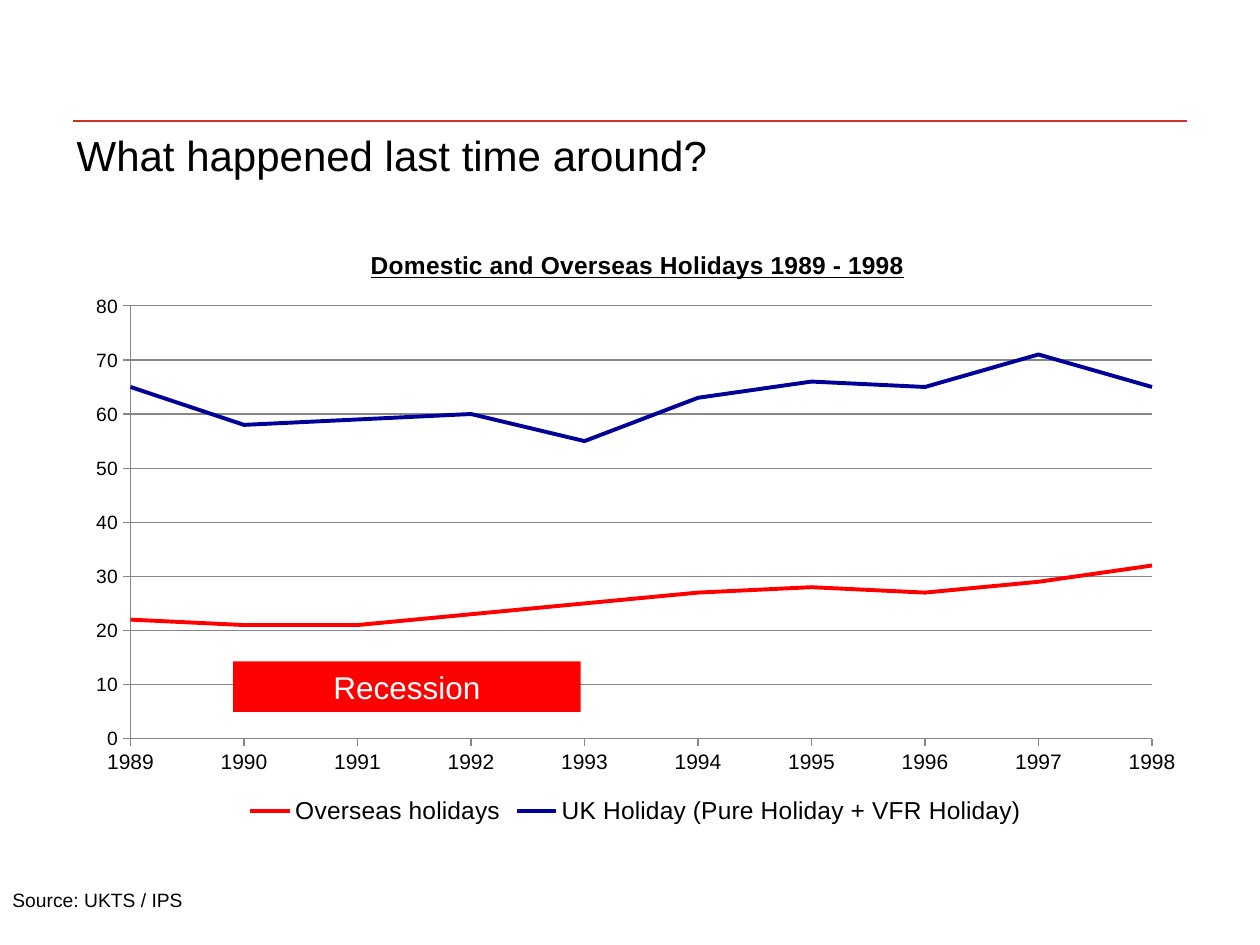
import pptx
import pptx.util
import pptx.chart.data
import pptx.dml.color
import pptx.enum.chart
import pptx.enum.shapes
import pptx.enum.text
import pptx.oxml
import pptx.oxml.ns

Pt = pptx.util.Pt
RGB = pptx.dml.color.RGBColor.from_string
ALIGN = pptx.enum.text.PP_ALIGN
ANCHOR = pptx.enum.text.MSO_ANCHOR

HEADING = "What happened last time around?"
SOURCE = "Source: UKTS / IPS"
CALLOUT = "Recession"
CHART_TITLE = "Domestic and Overseas Holidays 1989 - 1998"
YEARS = [str(year) for year in range(1989, 1999)]
HOLIDAYS = [
    ("Overseas holidays", "red", [22, 21, 21, 23, 25, 27, 28, 27, 29, 32]),
    ("UK Holiday (Pure Holiday + VFR Holiday)", "navy",
     [65, 58, 59, 60, 55, 63, 66, 65, 71, 65]),
]
THEME = {
    "font": "Arial",
    "colors": {"text": "000000", "white": "FFFFFF", "red": "FF0000",
               "navy": "000099", "rule": "CD3425", "grid": "868686"},
    "sizes": {"heading": 24, "callout": 18, "chart": 18, "chart_title": 14,
              "legend": 14, "years": 12, "values": 11, "source": 11},
}
# left, top, width, height in points
PLACES = {
    "chart": (42.5, 126, 641.5, 348.5),
    "heading": (36.7, 68.4, 680.4, 39.6),
    "source": (0, 504, 679.7, 33.8),
    "callout": (133.2, 378, 198.7, 28.8),
}
RULE = (41.8, 69.1, 678.2, 69.1)
# shares of the chart's width and height
TITLE_LAYOUT = {"x": 0.26, "y": 0.04}
PLOT_LAYOUT = {"x": 0.05, "y": 0.14, "w": 0.91, "h": 0.71}


def box(part):
    return [Pt(length) for length in PLACES[part]]


def style_font(font, part, color="text", bold=False):
    font.name = THEME["font"]
    font.size = Pt(THEME["sizes"][part])
    font.bold = bold
    font.color.rgb = RGB(THEME["colors"][color])


def style_line(line, color, width):
    line.color.rgb = RGB(THEME["colors"][color])
    line.width = Pt(width)


def write(shape, text, part, color="text", align=ALIGN.LEFT, anchor=ANCHOR.TOP):
    frame = shape.text_frame
    frame.word_wrap = True
    frame.vertical_anchor = anchor
    paragraph = frame.paragraphs[0]
    paragraph.text = text
    paragraph.alignment = align
    style_font(paragraph.font, part, color)


def layout_xml(shares, inner=False):
    """Manual chart layout, given as shares of the chart area."""
    target = '<c:layoutTarget val="inner"/>' if inner else ""
    modes = "".join(f'<c:{key}Mode val="edge"/>' for key in "xy")
    values = "".join(f'<c:{key} val="{share}"/>' for key, share in shares.items())
    return pptx.oxml.parse_xml(
        f'<c:layout {pptx.oxml.ns.nsdecls("c")}><c:manualLayout>'
        f"{target}{modes}{values}</c:manualLayout></c:layout>")


def place_in_chart(element, layout, after=None):
    for old in element.findall(pptx.oxml.ns.qn("c:layout")):
        element.remove(old)
    if after is None:
        element.insert(0, layout)
    else:
        element.find(pptx.oxml.ns.qn(after)).addnext(layout)


def start_lines_on_axis(value_axis):
    """Drop the half-category gap before the first and after the last year."""
    for old in value_axis.findall(pptx.oxml.ns.qn("c:crossBetween")):
        value_axis.remove(old)
    value_axis.find(pptx.oxml.ns.qn("c:crosses")).addnext(pptx.oxml.parse_xml(
        f'<c:crossBetween {pptx.oxml.ns.nsdecls("c")} val="midCat"/>'))


def add_rule(slide):
    rule = slide.shapes.add_connector(
        pptx.enum.shapes.MSO_CONNECTOR.STRAIGHT, *[Pt(end) for end in RULE])
    style_line(rule.line, "rule", 0.75)
    rule._element.spPr.append(pptx.oxml.parse_xml(
        f'<a:effectLst {pptx.oxml.ns.nsdecls("a")}/>'))


def add_holiday_chart(slide):
    holiday_data = pptx.chart.data.CategoryChartData()
    holiday_data.categories = YEARS
    for name, _, values in HOLIDAYS:
        holiday_data.add_series(name, values)
    chart = slide.shapes.add_chart(
        pptx.enum.chart.XL_CHART_TYPE.LINE, *box("chart"), holiday_data).chart
    style_font(chart.font, "chart")

    chart.has_title = True
    title = chart.chart_title.text_frame.paragraphs[0]
    title.text = CHART_TITLE
    style_font(title.font, "chart_title", bold=True)
    title.font.underline = True
    place_in_chart(chart.chart_title._element, layout_xml(TITLE_LAYOUT), "c:tx")
    place_in_chart(chart._chartSpace.chart.plotArea, layout_xml(PLOT_LAYOUT, True))

    chart.has_legend = True
    chart.legend.position = pptx.enum.chart.XL_LEGEND_POSITION.BOTTOM
    chart.legend.include_in_layout = False
    style_font(chart.legend.font, "legend")

    for axis, part in ((chart.category_axis, "years"), (chart.value_axis, "values")):
        style_font(axis.tick_labels.font, part)
        style_line(axis.format.line, "grid", 0.75)
        axis.major_tick_mark = pptx.enum.chart.XL_TICK_MARK.OUTSIDE
        axis.minor_tick_mark = pptx.enum.chart.XL_TICK_MARK.NONE
    counts = chart.value_axis
    counts.minimum_scale, counts.maximum_scale, counts.major_unit = 0, 80, 10
    counts.has_major_gridlines = True
    style_line(counts.major_gridlines.format.line, "grid", 0.75)
    start_lines_on_axis(counts._element)

    chart.plots[0].vary_by_categories = False
    for series, (_, color, _) in zip(chart.plots[0].series, HOLIDAYS):
        series.smooth = False
        series.marker.style = pptx.enum.chart.XL_MARKER_STYLE.NONE
        style_line(series.format.line, color, 2.25)


def add_callout(slide):
    callout = slide.shapes.add_shape(
        pptx.enum.shapes.MSO_SHAPE.RECTANGLE, *box("callout"))
    callout.shadow.inherit = False
    callout.fill.solid()
    callout.fill.fore_color.rgb = RGB(THEME["colors"]["red"])
    callout.line.fill.background()
    write(callout, CALLOUT, "callout", "white", ALIGN.CENTER, ANCHOR.MIDDLE)


def main():
    deck = pptx.Presentation()
    deck.slide_width, deck.slide_height = Pt(720), Pt(540)
    slide = deck.slides.add_slide(deck.slide_layouts[6])
    add_rule(slide)
    add_holiday_chart(slide)
    write(slide.shapes.add_textbox(*box("heading")), HEADING, "heading",
          anchor=ANCHOR.MIDDLE)
    write(slide.shapes.add_textbox(*box("source")), SOURCE, "source")
    add_callout(slide)
    deck.save("out.pptx")


if __name__ == "__main__":
    main()
